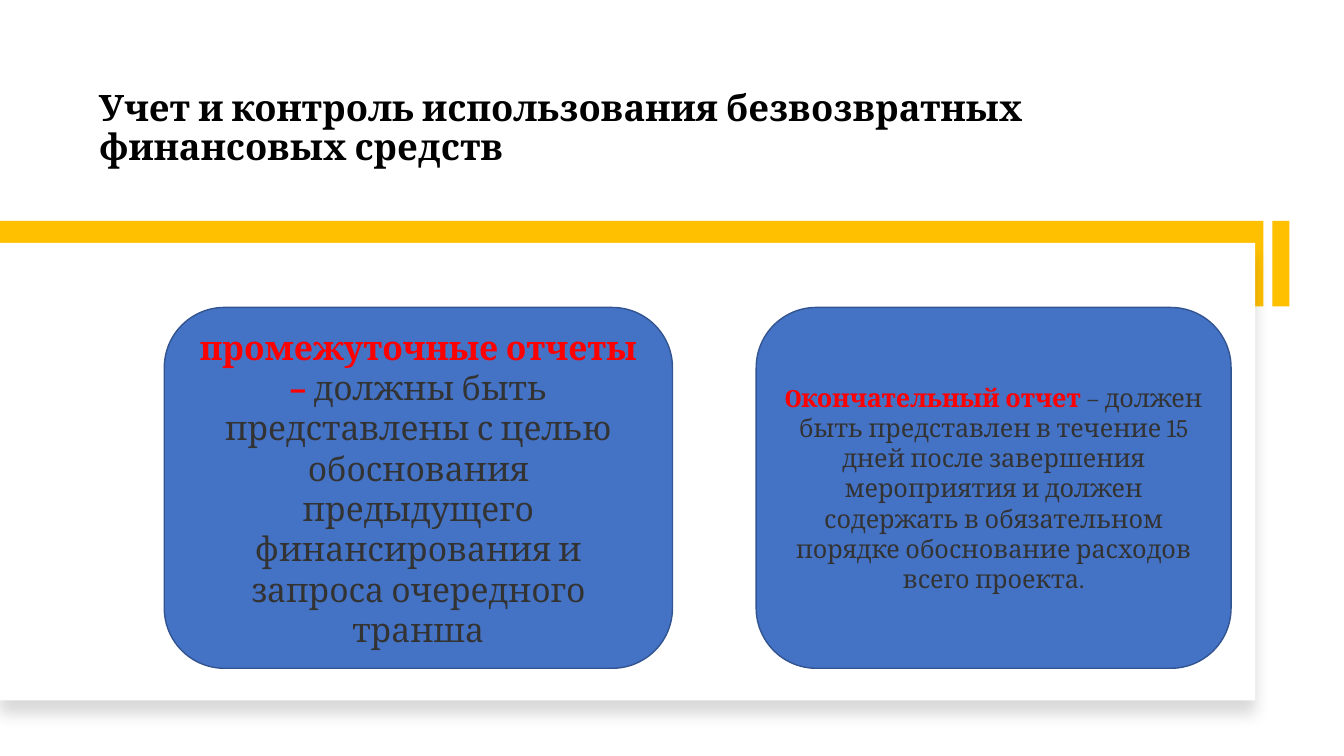
"""Build the slide on accounting for the use of grant funds."""
from lxml.etree import SubElement
from pptx import Presentation
from pptx.dml.color import RGBColor
from pptx.enum.shapes import MSO_SHAPE as Preset
from pptx.enum.text import MSO_ANCHOR as Anchor, MSO_AUTO_SIZE as AutoSize, PP_ALIGN as Align
from pptx.oxml.ns import qn
from pptx.util import Inches, Pt

CELL = Inches(0.1)
BAND_TOP, BAND_HEIGHT = 21.9, 8.5
CARD_TOP, CARD_HEIGHT = 30.5, 35.8
GOLD, WHITE, BLACK = "FFC000", "FFFFFF", "000000"
BLUE, NAVY, RED, GRAY = "4472C4", "325491", "FF0000", "333333"

CARDS = [
    (16.3, 50.4, 24, "промежуточные отчеты – ",
     "должны быть представлены с целью обоснования предыдущего "
     "финансирования и запроса очередного транша"),
    (75, 47.1, 18, "Oкончательный отчет ",
     "– должен быть представлен в течение 15 дней после завершения "
     "мероприятия и должен содержать в обязательном порядке "
     "обоснование расходов всего проекта."),
]


def grid(*cells):
    return [round(cell * CELL) for cell in cells]


def color(hex_text):
    return RGBColor.from_string(hex_text)


def apply(target, **values):
    for name, value in values.items():
        setattr(target, name, value)


def style_span(span, size, ink, bold):
    apply(span.font, name="Cambria", size=Pt(size), bold=bold)
    span.font.color.rgb = color(ink)


def add_box(page, preset, place, fill, line=None):
    box = page.shapes.add_shape(preset, *grid(*place))
    box.shadow.inherit = False
    box.fill.solid()
    box.fill.fore_color.rgb = color(fill)
    if line:
        box.line.color.rgb = color(line)
        box.line.width = Pt(1)
    else:
        box.line.fill.background()
    return box


def add_shadow(box, ink, alpha, blur, distance, degrees):
    effects = box._element.spPr.find(qn("a:effectLst"))
    shadow = SubElement(effects, qn("a:outerShdw"), {
        "blurRad": str(Pt(blur)), "dist": str(Pt(distance)),
        "dir": str(degrees * 60000), "algn": "t", "rotWithShape": "0"})
    tone = SubElement(shadow, qn("a:srgbClr"), val=ink)
    SubElement(tone, qn("a:alpha"), val=str(alpha * 1000))


def add_card(page, left, width, size, term, detail):
    place = (left, CARD_TOP, width, CARD_HEIGHT)
    box = add_box(page, Preset.ROUNDED_RECTANGLE, place, BLUE, NAVY)
    apply(box.text_frame, word_wrap=True, vertical_anchor=Anchor.MIDDLE)
    para = box.text_frame.paragraphs[0]
    apply(para, alignment=Align.CENTER, space_after=Pt(6))
    for text, ink, bold in ((term, RED, True), (detail, GRAY, False)):
        span = para.add_run()
        span.text = text
        style_span(span, size, ink, bold)


def set_title(page, text):
    title = page.shapes.title
    left, top, width, height = grid(8.8, 4.2, 101, 13)
    apply(title, left=left, top=top, width=width, height=height)
    apply(title.text_frame, word_wrap=True, auto_size=AutoSize.NONE,
          vertical_anchor=Anchor.BOTTOM)
    para = title.text_frame.paragraphs[0]
    apply(para, text=text, alignment=Align.LEFT, line_spacing=0.9)
    for span in para.runs:
        style_span(span, 26, BLACK, True)


def main():
    deck = Presentation()
    apply(deck, slide_width=Inches(13.33), slide_height=Inches(7.5))
    page = deck.slides.add_slide(deck.slide_layouts[5])
    set_title(page, "Учет и контроль использования безвозвратных\vфинансовых средств")
    for left, width in ((126.2, 1.7), (0, 125.3)):
        add_box(page, Preset.RECTANGLE, (left, BAND_TOP, width, BAND_HEIGHT), GOLD)
    panel = add_box(page, Preset.RECTANGLE, (0, 24.1, 124.5, 45.4), WHITE)
    add_shadow(panel, BLACK, alpha=15, blur=11, distance=10, degrees=90)
    for card in CARDS:
        add_card(page, *card)
    deck.save("out.pptx")


if __name__ == "__main__":
    main()
